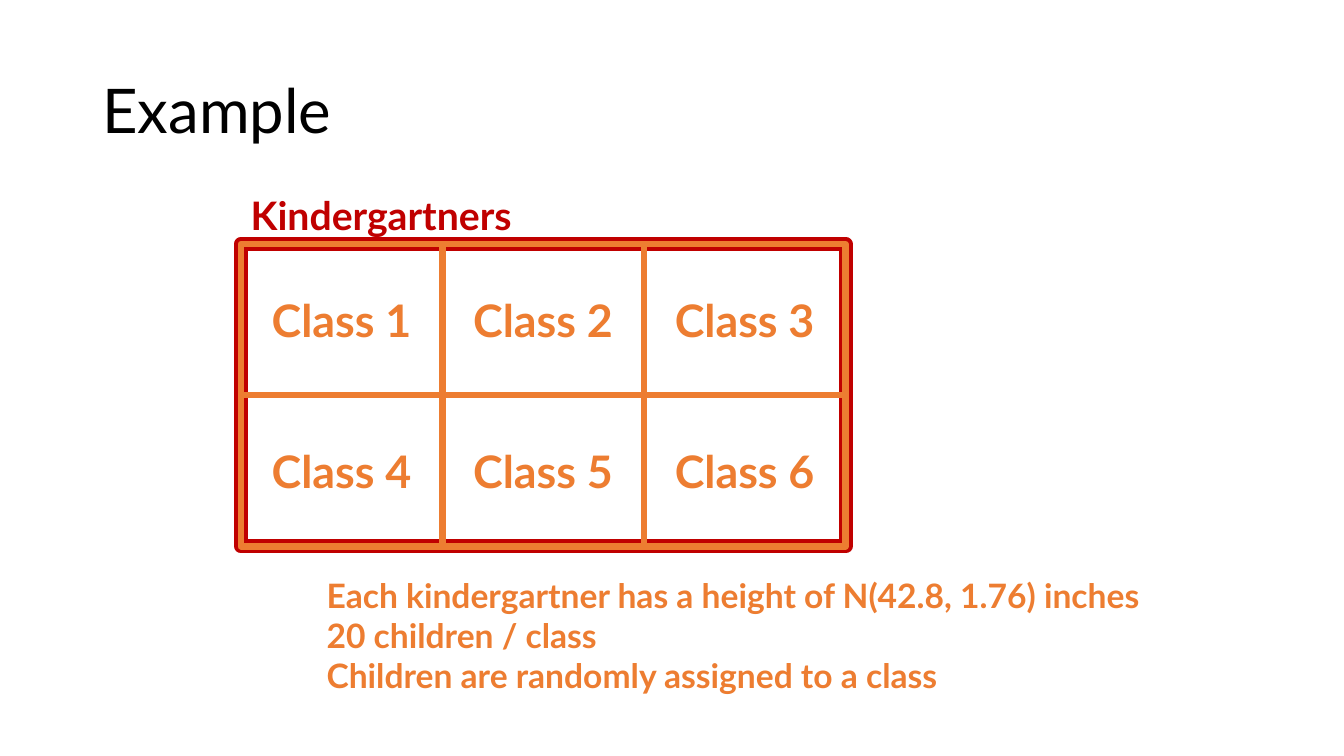
from pptx import Presentation
from pptx.dml.color import RGBColor
from pptx.enum.shapes import MSO_SHAPE as Shape
from pptx.enum.text import MSO_ANCHOR as Anchor, PP_ALIGN as Align
from pptx.util import Cm, Pt

FONT = "Lato"
BLACK, RED, ORANGE = "000000", "C00000", "ED7D31"
COLS, ROWS = 3, 2


def tint(code):
    return RGBColor.from_string(code)


def write(frame, text, size, color, bold=True, align=Align.LEFT):
    frame.word_wrap = True
    frame.text = text
    for para in frame.paragraphs:
        para.alignment = align
        for run in para.runs:
            font = run.font
            font.name, font.size, font.bold = FONT, Pt(size), bold
            font.color.rgb = tint(color)


def add_text(slide, box, text, size, color, bold=True):
    frame = slide.shapes.add_textbox(*map(Cm, box)).text_frame
    write(frame, text, size, color, bold)
    return frame


def add_rect(slide, box, color, width):
    """Add an unfilled outline."""
    rect = slide.shapes.add_shape(Shape.RECTANGLE, *map(Cm, box))
    rect.shadow.inherit = False
    rect.fill.background()
    rect.line.color.rgb = tint(color)
    rect.line.width = Pt(width)
    return rect


def add_title(slide, box):
    frame = add_text(slide, box, "Example", 44, BLACK, False)
    frame.vertical_anchor = Anchor.MIDDLE
    frame.paragraphs[0].line_spacing = 0.9


def add_school(slide, box):
    """Frame the whole group, label it above and split it into classes."""
    left, top, width, height = box
    add_rect(slide, box, RED, 10)
    label = 1.45
    add_text(slide, (left, top - label, 9.09, label), "Kindergartners", 28, RED)
    wide, high = width / COLS, height / ROWS
    for i in range(COLS * ROWS):
        row, col = divmod(i, COLS)
        cell = (left + col * wide, top + row * high, wide, high)
        frame = add_rect(slide, cell, ORANGE, 4.5).text_frame
        frame.vertical_anchor = Anchor.MIDDLE
        write(frame, f"Class {i + 1}", 32, ORANGE, align=Align.CENTER)


def add_facts(slide, box):
    facts = [
        "Each kindergartner has a height of N(42.8, 1.76) inches",
        "20 children / class",
        "Children are randomly assigned to a class",
    ]
    add_text(slide, box, "\n".join(facts), 24, ORANGE)


def main():
    deck = Presentation()
    deck.slide_width, deck.slide_height = Cm(33.87), Cm(19.05)
    slide = deck.slides.add_slide(deck.slide_layouts[6])
    add_title(slide, (2.33, 1.01, 29.21, 3.68))
    add_school(slide, (6.07, 6.15, 15.24, 7.62))
    add_facts(slide, (7.98, 14.35, 23.57, 3.33))
    deck.save("out.pptx")


if __name__ == "__main__":
    main()
